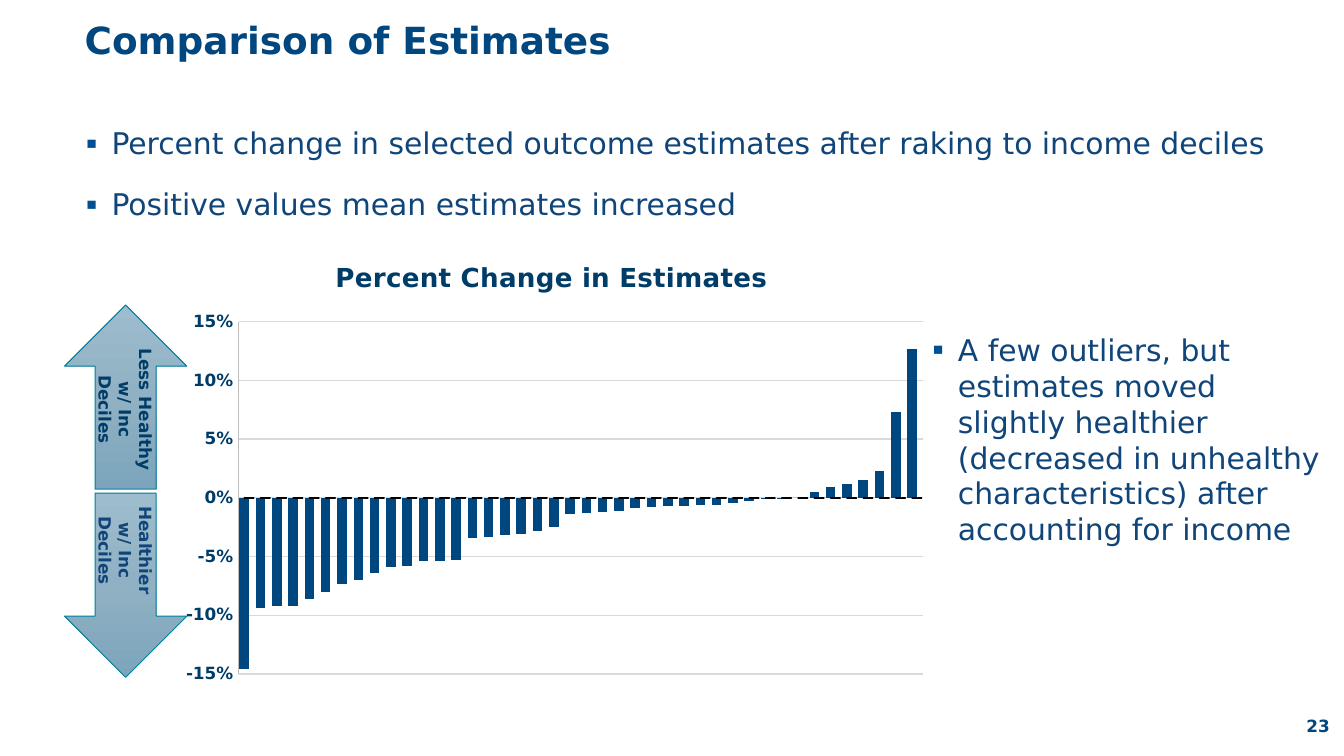
from copy import deepcopy

from lxml.etree import SubElement
from pptx import Presentation
from pptx.chart.data import CategoryChartData
from pptx.dml.color import RGBColor
from pptx.enum.chart import XL_CHART_TYPE, XL_TICK_MARK
from pptx.enum.shapes import MSO_SHAPE
from pptx.enum.text import MSO_ANCHOR, MSO_AUTO_SIZE, PP_ALIGN
from pptx.oxml import parse_xml
from pptx.oxml.ns import nsdecls, qn
from pptx.util import Inches, Pt

FONT = "DejaVu Sans"
NAVY = "00467F"
DARK = "003C68"
BODY = "10457A"
CHANGES = [
    -0.146, -0.094, -0.092, -0.092, -0.086, -0.08, -0.073, -0.07, -0.064,
    -0.059, -0.058, -0.054, -0.054, -0.053, -0.034, -0.033, -0.032, -0.031,
    -0.028, -0.025, -0.014, -0.013, -0.012, -0.011, -0.009, -0.008, -0.007,
    -0.007, -0.006, -0.006, -0.004, -0.003, -0.001, -0.001, 0, 0.005, 0.009,
    0.012, 0.015, 0.023, 0.073, 0.127,
]


def rgb(color):
    return RGBColor.from_string(color)


def style(font, size, color, bold=False):
    font.name = FONT
    font.size = Pt(size)
    font.bold = bold
    font.color.rgb = rgb(color)


def place(shape, left, top, width, height):
    shape.left, shape.top = Inches(left), Inches(top)
    shape.width, shape.height = Inches(width), Inches(height)


def fill_title(title, text):
    place(title, 0.53, 0, 9.17, 0.63)
    frame = title.text_frame
    frame.text = text
    frame.auto_size = MSO_AUTO_SIZE.NONE
    frame.vertical_anchor = MSO_ANCHOR.MIDDLE
    paragraph = frame.paragraphs[0]
    paragraph.alignment = PP_ALIGN.LEFT
    paragraph.line_spacing = 0.9
    style(paragraph.font, 20, NAVY, True)


def fill_bullets(frame, items):
    frame.word_wrap = True
    frame.auto_size = MSO_AUTO_SIZE.NONE
    frame.text = "\n".join(items)
    for index, paragraph in enumerate(frame.paragraphs):
        properties = paragraph._p.get_or_add_pPr()
        properties.set("marL", str(Inches(0.26)))
        properties.set("indent", str(Inches(-0.19)))
        bullet_color = SubElement(properties, qn("a:buClr"))
        SubElement(bullet_color, qn("a:srgbClr"), val="004F90")
        SubElement(properties, qn("a:buSzPct"), val="110000")
        SubElement(properties, qn("a:buFont"), typeface="Arial")
        SubElement(properties, qn("a:buChar"), char="▪")
        paragraph.space_before = Pt(7.5 if index else 0)
        paragraph.space_after = Pt(6)
        style(paragraph.font, 16, BODY)


def add_page_number(slide, number):
    frame = slide.shapes.add_textbox(
        Inches(9.72), Inches(5.25), Inches(0.35), Inches(0.3)).text_frame
    frame.margin_left = 0
    frame.vertical_anchor = MSO_ANCHOR.MIDDLE
    frame.text = number
    style(frame.paragraphs[0].font, 9, NAVY, True)


def set_layout(parent, position, **values):
    settings = "".join(f'<c:{name} val="{value}"/>' for name, value in values.items())
    layout = parse_xml(
        f'<c:layout {nsdecls("c")}><c:manualLayout>{settings}</c:manualLayout></c:layout>')
    for old in parent.findall(qn("c:layout")):
        parent.remove(old)
    parent.insert(position, layout)


def add_change_chart(slide):
    data = CategoryChartData(number_format="0%")
    data.categories = [str(n + 1) for n in range(len(CHANGES))]
    data.add_series("Series 1", CHANGES)
    data.add_series("Series 2", [0] * len(CHANGES))
    chart = slide.shapes.add_chart(
        XL_CHART_TYPE.COLUMN_CLUSTERED, Inches(1.26), Inches(1.79),
        Inches(5.72), Inches(3.36), data).chart
    style(chart.font, 10, "000000")
    chart.has_legend = False
    chart.has_title = True
    heading = chart.chart_title.text_frame
    heading.text = "Percent Change in Estimates"
    style(heading.paragraphs[0].font, 14, DARK, True)
    set_layout(chart.chart_title._element, 1,
               xMode="edge", yMode="edge", x=0.21, y=0.03)
    set_layout(chart._chartSpace.chart.plotArea, 0, layoutTarget="inner",
               xMode="edge", yMode="edge", x=0.09, y=0.18, w=0.89, h=0.78)

    chart.category_axis.visible = False
    axis = chart.value_axis
    axis.minimum_scale, axis.maximum_scale, axis.major_unit = -0.15, 0.15, 0.05
    axis.major_tick_mark = axis.minor_tick_mark = XL_TICK_MARK.NONE
    axis.tick_labels.number_format = "0%"
    axis.tick_labels.number_format_is_linked = False
    style(axis.tick_labels.font, 9, DARK, True)
    for line, color in ((axis.format.line, "BFBFBF"),
                        (axis.major_gridlines.format.line, "D9D9D9")):
        line.color.rgb = rgb(color)
        line.width = Pt(0.75)

    plot = chart.plots[0]
    plot.gap_width, plot.overlap = 20, 50
    plot.vary_by_categories = False
    for series, color in zip(plot.series, (NAVY, "A71C20")):
        series.invert_if_negative = False
        series.format.fill.solid()
        series.format.fill.fore_color.rgb = rgb(color)
    zero_line = plot.series[1].format.line
    zero_line.color.rgb = rgb("000000")
    zero_line.width = Pt(0.75)


def add_direction_arrow(slide, preset, top, text, color):
    arrow = slide.shapes.add_shape(
        preset, Inches(0.48), Inches(top), Inches(0.91), Inches(1.37))
    arrow.shadow.inherit = False
    arrow.fill.gradient()
    arrow.fill.gradient_angle = 270
    stop_list = arrow._element.spPr.find(".//" + qn("a:gsLst"))
    stop_list.insert(1, deepcopy(stop_list[0]))
    shades = ((0, "9DBCCD"), (0.5, "90B1C3"), (1, "7CA5BB"))
    for stop, (position, shade) in zip(arrow.fill.gradient_stops, shades):
        stop.position = position
        stop.color.rgb = rgb(shade)
    arrow.line.color.rgb = rgb("007E9D")
    arrow.line.width = Pt(0.5)
    frame = arrow.text_frame
    frame.word_wrap = True
    frame.vertical_anchor = MSO_ANCHOR.MIDDLE
    frame._txBody.bodyPr.set("vert", "eaVert")
    frame.text = text
    for paragraph in frame.paragraphs:
        paragraph.alignment = PP_ALIGN.CENTER
        style(paragraph.font, 9, color, True)


def main():
    presentation = Presentation()
    presentation.slide_width = Inches(10)
    presentation.slide_height = presentation.slide_width * 9 // 16
    slide = presentation.slides.add_slide(presentation.slide_layouts[1])

    fill_title(slide.shapes.title, "Comparison of Estimates")
    body = slide.placeholders[1]
    place(body, 0.47, 0.88, 9.11, 4.18)
    fill_bullets(body.text_frame, [
        "Percent change in selected outcome estimates after raking to income deciles",
        "Positive values mean estimates increased",
    ])
    add_page_number(slide, "23")
    takeaway = slide.shapes.add_textbox(
        Inches(6.77), Inches(2.42), Inches(3.16), Inches(2.1))
    fill_bullets(takeaway.text_frame, [
        "A few outliers, but estimates moved slightly healthier "
        "(decreased in unhealthy characteristics) after accounting for income",
    ])
    add_change_chart(slide)
    add_direction_arrow(slide, MSO_SHAPE.DOWN_ARROW, 3.67,
                        "Healthier\nw/ Inc Deciles", BODY)
    add_direction_arrow(slide, MSO_SHAPE.UP_ARROW, 2.27,
                        "Less Healthy w/ Inc Deciles", DARK)
    presentation.save("out.pptx")


if __name__ == "__main__":
    main()
